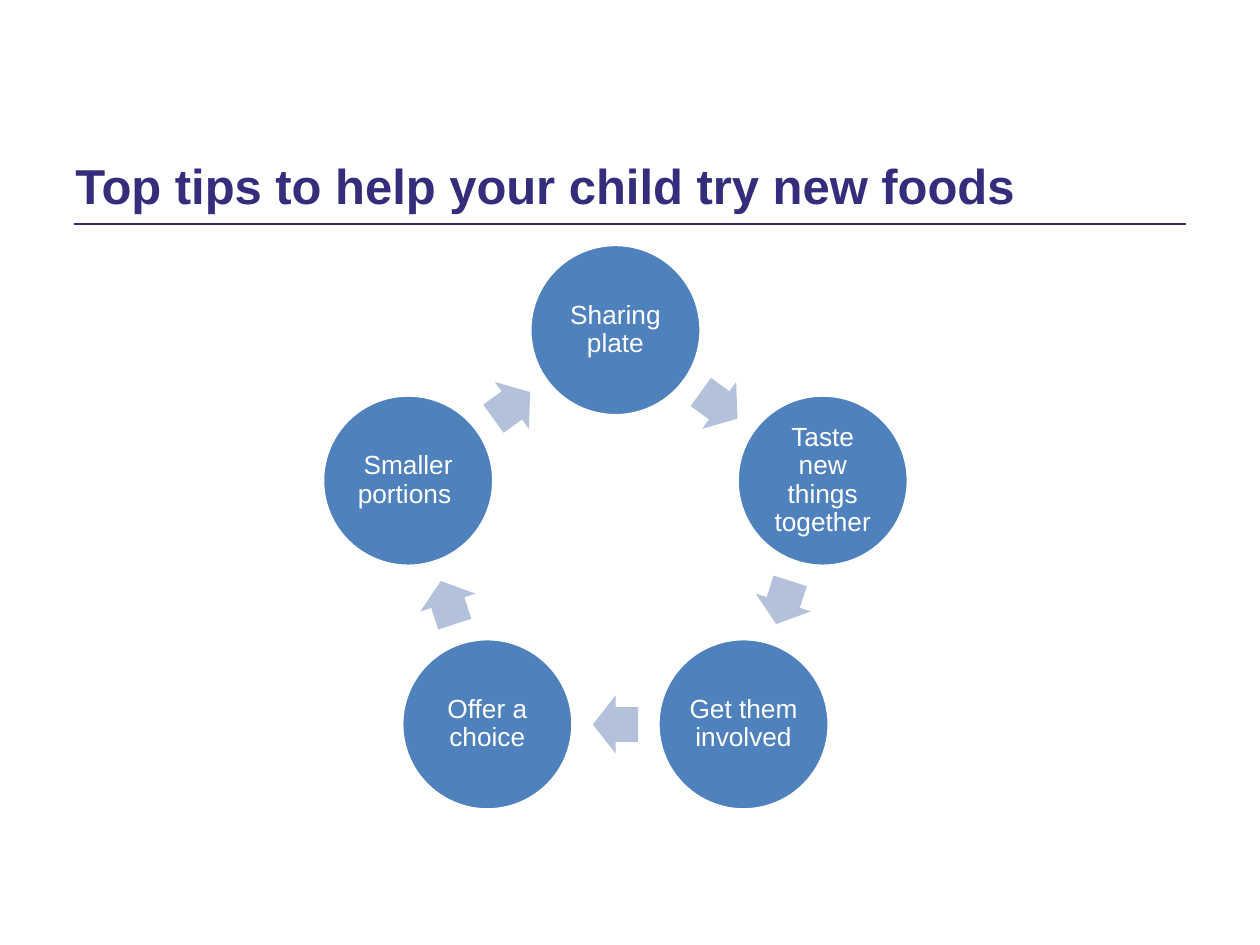
from math import cos, pi, radians, sin

from lxml import etree
from pptx import Presentation
from pptx.dml.color import RGBColor
from pptx.enum.shapes import MSO_CONNECTOR, MSO_SHAPE
from pptx.enum.text import MSO_ANCHOR, PP_ALIGN
from pptx.oxml.ns import qn
from pptx.util import Inches, Pt

CIRCLE = MSO_SHAPE.OVAL
ARROW = MSO_SHAPE.RIGHT_ARROW
STRAIGHT = MSO_CONNECTOR.STRAIGHT
MIDDLE = MSO_ANCHOR.MIDDLE
CENTER = PP_ALIGN.CENTER

FONT = "Arial"
NAVY, BLUE, PALE, WHITE = "332D7C", "4F81BD", "B3C1DB", "FFFFFF"
HEADING = "Top tips to help your child try new foods"
TIPS = [
    "Sharing plate",
    "Taste new things together",
    "Get them involved",
    "Offer a choice",
    "Smaller portions ",
]


def color(value):
    return RGBColor.from_string(value)


def write(frame, text, size, tint, bold=False):
    frame.word_wrap = True
    frame.vertical_anchor = MIDDLE
    paragraph = frame.paragraphs[0]
    paragraph.text = text
    paragraph.font.name = FONT
    paragraph.font.size = Pt(size)
    paragraph.font.bold = bold
    paragraph.font.color.rgb = color(tint)
    return paragraph


def add_centered(slide, kind, x, y, width, height, fill):
    shape = slide.shapes.add_shape(
        kind, Inches(x - width / 2), Inches(y - height / 2), Inches(width), Inches(height)
    )
    shape.shadow.inherit = False
    shape.fill.solid()
    shape.fill.fore_color.rgb = color(fill)
    return shape


def add_heading(slide, left, top, width, height):
    heading = slide.shapes.add_textbox(Inches(left), Inches(top), Inches(width), Inches(height))
    write(heading.text_frame, HEADING, 28, NAVY, bold=True)
    margin = width * 0.01
    base = Inches(top + height)
    rule = slide.shapes.add_connector(
        STRAIGHT, Inches(left + margin), base, Inches(left + width - margin), base
    )
    rule.line.color.rgb = color(NAVY)
    rule.line.width = Pt(1)
    etree.SubElement(rule._element.spPr, qn("a:effectLst"))


def add_tip(slide, x, y, diameter, text):
    tip = add_centered(slide, CIRCLE, x, y, diameter, diameter, BLUE)
    tip.line.color.rgb = color(WHITE)
    tip.line.width = Pt(2)
    frame = tip.text_frame
    frame.margin_left = frame.margin_right = Inches(0.02)
    frame.margin_top = frame.margin_bottom = Inches(0.02)
    paragraph = write(frame, text, 15, WHITE)
    paragraph.alignment = CENTER
    paragraph.line_spacing = 0.9


def add_step_arrow(slide, x, y, rotation):
    arrow = add_centered(slide, ARROW, x, y, 0.36, 0.46, PALE)
    arrow.line.fill.background()
    arrow.adjustments[0] = 0.6
    arrow.adjustments[1] = 0.5
    arrow.rotation = rotation


def add_cycle(slide, left, top, width, diameter):
    step = 360 / len(TIPS)
    radius = (width - diameter) / 2 / sin(radians(step))
    inner = radius * cos(pi / len(TIPS))
    center_x = left + width / 2
    center_y = top + diameter / 2 + radius

    def on_ring(distance, angle):
        turn = radians(angle)
        return center_x + distance * sin(turn), center_y - distance * cos(turn)

    for index, tip in enumerate(TIPS):
        angle = index * step
        halfway = angle + step / 2
        add_tip(slide, *on_ring(radius, angle), diameter, tip)
        add_step_arrow(slide, *on_ring(inner, halfway), halfway)


def main():
    deck = Presentation()
    deck.slide_width, deck.slide_height = Inches(10), Inches(7.5)
    slide = deck.slides.add_slide(deck.slide_layouts[6])
    add_heading(slide, 0.5, 1.15, 9, 0.63)
    add_cycle(slide, 2.56, 1.94, 4.65, 1.36)
    deck.save("out.pptx")


if __name__ == "__main__":
    main()
